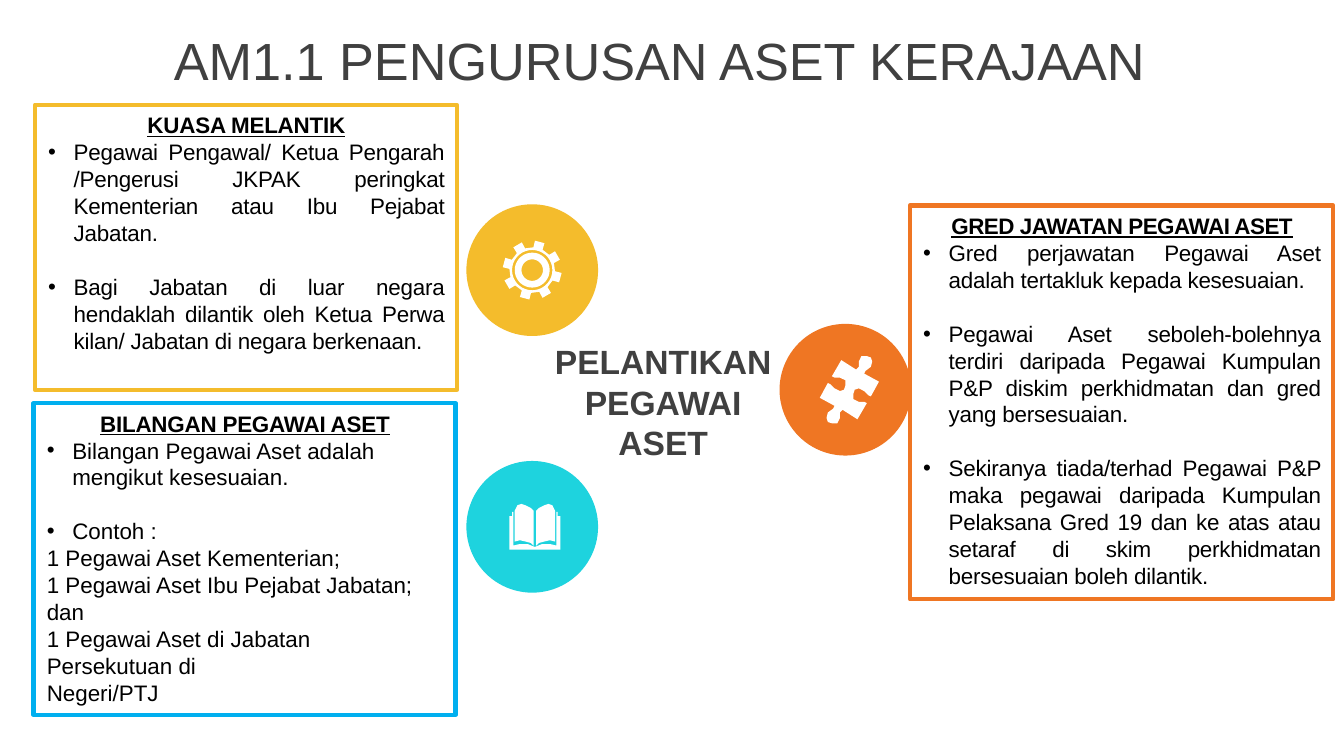
from dataclasses import dataclass
from math import cos, radians, sin

from lxml.etree import SubElement
from pptx import Presentation
from pptx.dml.color import RGBColor
from pptx.enum.shapes import MSO_SHAPE
from pptx.enum.text import MSO_ANCHOR, PP_ALIGN
from pptx.oxml.ns import qn
from pptx.util import Inches, Pt

COLORS = {
    "yellow": "F4BC2C",
    "orange": "EF7623",
    "cyan": "1ED3DE",
    "blue": "00AFEF",
    "white": "FFFFFF",
    "gray": "404040",
    "black": "000000",
}
GAP = 14.5
DIAMETER = 0.98
Points = list[tuple[float, float]]
Box = tuple[float, float, float, float]


@dataclass
class Para:
    text: str
    bullet: bool = True
    align: PP_ALIGN = PP_ALIGN.JUSTIFY
    before: float = 0


@dataclass
class Panel:
    box: Box
    color: str
    heading: str
    heading_spacing: float
    spacing: float
    paras: list[Para]


@dataclass
class Disc:
    x: float
    y: float
    color: str


LEFT = PP_ALIGN.LEFT
PANELS = [
    Panel((6.77, 1.53, 3.15, 2.93), "orange", "GRED JAWATAN PEGAWAI ASET", -0.25, -0.1, [
        Para("Gred perjawatan Pegawai Aset adalah tertakluk kepada kesesuaian."),
        Para("Pegawai Aset seboleh-bolehnya terdiri daripada Pegawai Kumpulan P&P "
             "diskim perkhidmatan dan gred yang bersesuaian.", before=GAP),
        Para("Sekiranya tiada/terhad Pegawai P&P maka pegawai daripada Kumpulan "
             "Pelaksana Gred 19 dan ke atas atau setaraf di skim perkhidmatan "
             "bersesuaian boleh dilantik.", before=GAP),
    ]),
    Panel((0.26, 0.78, 3.14, 2.12), "yellow", "KUASA MELANTIK", -0.1, -0.1, [
        Para("Pegawai Pengawal/ Ketua Pengarah\v/Pengerusi JKPAK peringkat "
             "Kementerian atau Ibu Pejabat Jabatan."),
        Para("Bagi Jabatan di luar negara hendaklah dilantik oleh Ketua Perwa "
             "kilan/ Jabatan di negara berkenaan.", before=GAP),
    ]),
    Panel((0.25, 3, 3.14, 2.32), "blue", "BILANGAN PEGAWAI ASET", -0.1, 0, [
        Para("Bilangan Pegawai Aset adalah mengikut kesesuaian.", align=LEFT),
        Para("Contoh :", align=LEFT, before=GAP),
        Para("1 Pegawai Aset Kementerian;", False, LEFT),
        Para("1 Pegawai Aset Ibu Pejabat Jabatan;", False, LEFT),
        Para("dan", False, LEFT),
        Para("1 Pegawai Aset di Jabatan\vPersekutuan di\vNegeri/PTJ", False, LEFT),
    ]),
]
GEAR_DISC = Disc(3.96, 2.01, "yellow")
PUZZLE_DISC = Disc(6.29, 2.9, "orange")
BOOK_DISC = Disc(3.96, 3.92, "cyan")

PAGE = [(0.01, -0.12), (0.03, -0.14), (0.07, -0.16), (0.1, -0.17), (0.13, -0.16),
        (0.15, -0.12), (0.15, 0.11), (0.11, 0.1), (0.07, 0.11), (0.03, 0.12), (0.01, 0.14)]
COVER = [(0, 0.17), (0.19, 0.17), (0.19, -0.08), (0.17, -0.08), (0.17, -0.11),
         (0.16, -0.11), (0.16, 0.14), (0.12, 0.13), (0.05, 0.13), (0, 0.15)]
PUZZLE_HALF = [(0.22, -0.06), (0.11, -0.12), (0.12, -0.14), (0.16, -0.17), (0.17, -0.21),
               (0.16, -0.24), (0.13, -0.25), (0.09, -0.25), (0.07, -0.21), (0.07, -0.17),
               (0.05, -0.15), (-0.06, -0.22), (-0.13, -0.1), (-0.11, -0.09), (-0.07, -0.09),
               (-0.03, -0.07), (-0.03, -0.03), (-0.04, 0), (-0.07, 0.01), (-0.11, -0.01),
               (-0.14, -0.04), (-0.16, -0.05)]


def rgb(color: str) -> RGBColor:
    return RGBColor.from_string(COLORS[color])


def paint(sp, color: str) -> None:
    sp.shadow.inherit = False
    sp.fill.solid()
    sp.fill.fore_color.rgb = rgb(color)
    sp.line.fill.background()


def add_disc(s, disc: Disc) -> None:
    half = DIAMETER / 2
    sp = s.shapes.add_shape(MSO_SHAPE.OVAL, Inches(disc.x - half), Inches(disc.y - half),
                            Inches(DIAMETER), Inches(DIAMETER))
    paint(sp, disc.color)


def shift(points: Points, x: float, y: float) -> Points:
    return [(x + dx, y + dy) for dx, dy in points]


def polar(points: Points) -> Points:
    return [(radius * cos(radians(a)), radius * sin(radians(a))) for a, radius in points]


def gear_contours(disc: Disc) -> list[Points]:
    tooth = [(-12, 0.17), (-9.5, 0.22), (9.5, 0.22), (12, 0.17)]
    teeth = polar([(15 + 45 * i + a, radius) for i in range(8) for a, radius in tooth])
    rings = [polar([(a, radius) for a in range(0, 360, 10)]) for radius in (0.15, 0.13, 0.08)]
    return [shift(points, disc.x, disc.y) for points in [teeth, *rings]]


def book_contours(disc: Disc) -> list[Points]:
    return [shift([(side * x, y) for x, y in half], disc.x + 0.02, disc.y)
            for side in (-1, 1) for half in (PAGE, COVER)]


def puzzle_contours(disc: Disc) -> list[Points]:
    points = PUZZLE_HALF + [(-x, -y) for x, y in PUZZLE_HALF]
    return [shift(points, disc.x + 0.03, disc.y)]


def add_icons(s, contours: list[Points]) -> None:
    scaled = [[(Inches(x), Inches(y)) for x, y in points] for points in contours]
    fb = s.shapes.build_freeform(*scaled[0][0])
    for i, points in enumerate(scaled):
        if i:
            fb.move_to(*points[0])
        fb.add_line_segments(points[1:])
    paint(fb.convert_to_shape(), "white")


def write(p, text: str, *, size: float = 12, color: str = "black", bold: bool = False,
          underline: bool = False, align: PP_ALIGN = PP_ALIGN.CENTER, spacing: float = 0,
          before: float = 0, bullet: bool = False) -> None:
    p.alignment = align
    p.line_spacing = Pt(size * 1.2)
    if before:
        p.space_before = Pt(before)
    if bullet:
        pPr = p._p.get_or_add_pPr()
        pPr.set("marL", str(Inches(0.19)))
        pPr.set("indent", str(-Inches(0.19)))
        SubElement(pPr, qn("a:buFont")).set("typeface", "Arial")
        SubElement(pPr, qn("a:buChar")).set("char", "•")
    p.text = text
    for r in p.runs:
        r.font.name = "Arial"
        r.font.size = Pt(size)
        r.font.bold = bold
        r.font.underline = underline
        r.font.color.rgb = rgb(color)
        r._r.get_or_add_rPr().set("spc", str(round(spacing * 100)))


def set_frame(tf, left: float = 0, top: float = 0, right: float = 0) -> None:
    tf.word_wrap = True
    tf.vertical_anchor = MSO_ANCHOR.TOP
    tf.margin_left, tf.margin_top = Inches(left), Inches(top)
    tf.margin_right, tf.margin_bottom = Inches(right), 0


def add_label(s, box: Box, text: str, **fmt) -> None:
    tf = s.shapes.add_textbox(*map(Inches, box)).text_frame
    set_frame(tf)
    write(tf.paragraphs[0], text, color="gray", **fmt)


def add_panel(s, panel: Panel) -> None:
    sp = s.shapes.add_shape(MSO_SHAPE.RECTANGLE, *map(Inches, panel.box))
    sp.shadow.inherit = False
    sp.fill.background()
    sp.line.color.rgb = rgb(panel.color)
    sp.line.width = Pt(2.28)
    tf = sp.text_frame
    set_frame(tf, 0.1, 0.05, 0.09)
    write(tf.paragraphs[0], panel.heading, bold=True, underline=True,
          spacing=panel.heading_spacing)
    for para in panel.paras:
        write(tf.add_paragraph(), para.text, align=para.align, before=para.before,
              bullet=para.bullet, spacing=panel.spacing)


def main() -> None:
    prs = Presentation()
    prs.slide_width = Inches(10)
    prs.slide_height = prs.slide_width * 9 // 16
    s = prs.slides.add_slide(prs.slide_layouts[6])
    add_label(s, (4.12, 2.54, 1.63, 0.93), "PELANTIKAN\vPEGAWAI\vASET", size=18, bold=True)
    for disc in (GEAR_DISC, PUZZLE_DISC, BOOK_DISC):
        add_disc(s, disc)
    add_icons(s, gear_contours(GEAR_DISC) + book_contours(BOOK_DISC)
              + puzzle_contours(PUZZLE_DISC))
    for panel in PANELS:
        add_panel(s, panel)
    add_label(s, (1.28, 0.21, 7.25, 0.49), "AM1.1 PENGURUSAN ASET KERAJAAN", size=28)
    prs.save("out.pptx")


if __name__ == "__main__":
    main()
